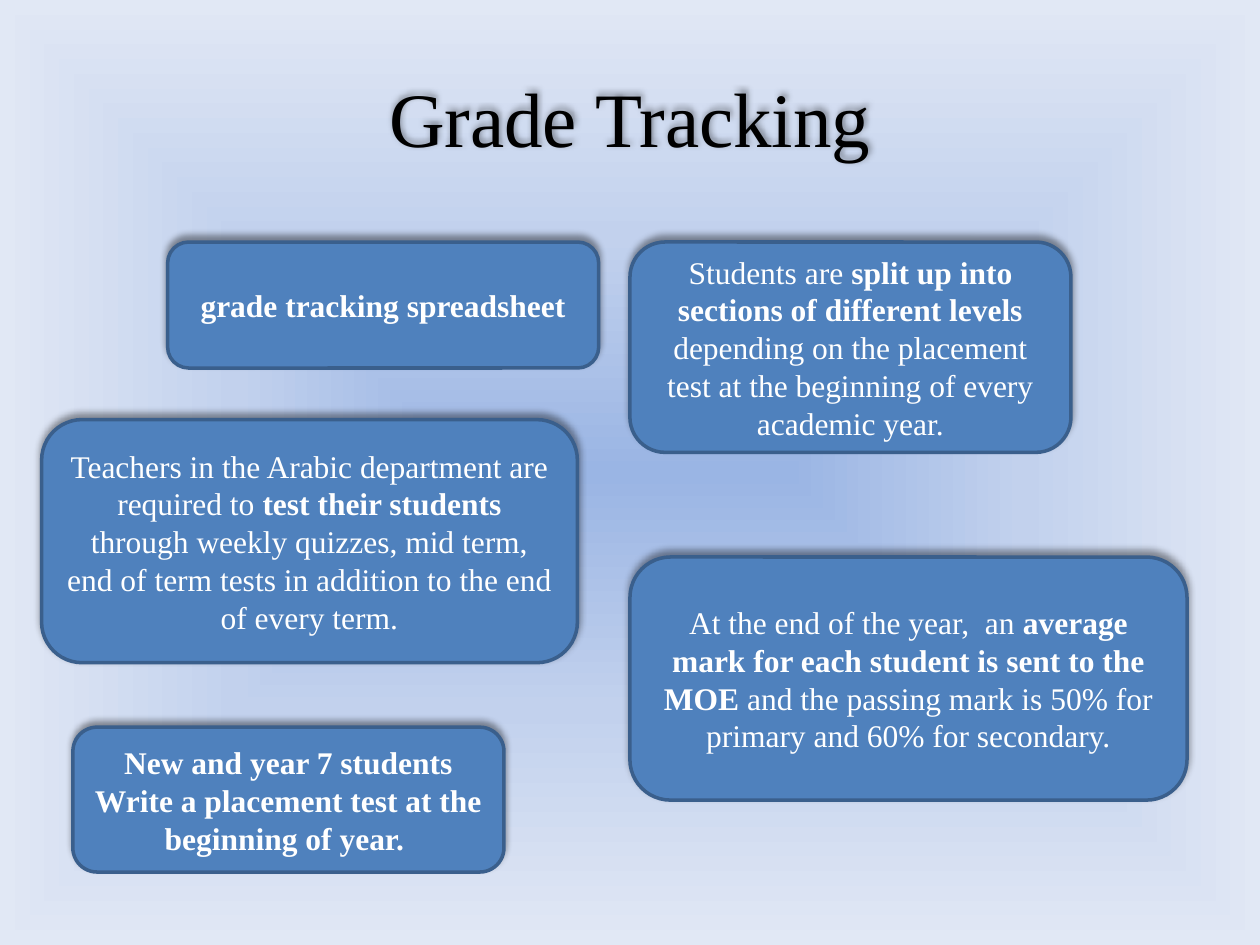
"""Build the Grade Tracking slide."""
from dataclasses import dataclass

from lxml import etree
from pptx import Presentation
from pptx import util as u
from pptx.dml.color import RGBColor
from pptx.enum import shapes, text
from pptx.oxml import ns


@dataclass(frozen=True)
class Theme:
    """Colours, font and sizes of the slide."""
    font: str = "Times New Roman"
    title_size: int = 44
    body_size: int = 18
    ink: str = "000000"
    paper: str = "FFFFFF"
    box: str = "4F81BD"
    edge: str = "3A5F8C"
    glow: tuple = ((0, "9AB5E4"), (50, "C2D1ED"), (100, "E1E8F5"))


THEME = Theme()

BOXES = (
    ((0.84, 8.46, 10.8, 4.9),
     "Teachers in the Arabic department are required to *test their students* "
     "through weekly quizzes, mid term, end of term tests in addition to the "
     "end of every term."),
    ((3.38, 4.88, 8.69, 2.54), "*grade tracking spreadsheet*"),
    ((12.7, 11.23, 11.23, 4.9),
     "At the end of the year,  an *average mark for each student is sent to "
     "the MOE *and the passing mark is 50% for primary and 60% for secondary."),
    ((12.7, 4.88, 8.89, 4.24),
     "Students are *split up into sections of different levels *depending on "
     "the placement test at the beginning of every academic year."),
    ((1.47, 14.66, 8.69, 2.92),
     "*New and year 7 students Write a placement test at the beginning of year. *"),
)


def add_element(parent, tag, **attributes):
    """Append a drawing element with the given attributes."""
    values = {name: str(value) for name, value in attributes.items()}
    return etree.SubElement(parent, ns.qn(tag), values)


def set_background(s):
    """Fill the slide with a gradient that spreads from its centre."""
    s.background.fill.gradient()
    grad = s.background._cSld.find(".//" + ns.qn("a:gradFill"))
    for child in list(grad):
        grad.remove(child)
    stops = add_element(grad, "a:gsLst")
    for position, colour in THEME.glow:
        stop = add_element(stops, "a:gs", pos=position * 1000)
        add_element(stop, "a:srgbClr", val=colour)
    spread = add_element(grad, "a:path", path="shape")
    add_element(spread, "a:fillToRect", l=50000, t=50000, r=50000, b=50000)


def add_shadow(sp):
    """Give a shape a soft shadow above it."""
    sp.shadow.inherit = False
    effects = sp._element.spPr.find(ns.qn("a:effectLst"))
    shadow = add_element(effects, "a:outerShdw", blurRad=u.Pt(4), dist=u.Pt(3),
                         dir=270 * 60000, algn="b", rotWithShape=0)
    colour = add_element(shadow, "a:srgbClr", val=THEME.ink)
    add_element(colour, "a:alpha", val=40000)


def write_text(sp, content, size, colour):
    """Write centred text in which asterisks switch bold on and off."""
    tf = sp.text_frame
    tf.word_wrap = True
    tf.vertical_anchor = text.MSO_ANCHOR.MIDDLE
    p = tf.paragraphs[0]
    p.alignment = text.PP_ALIGN.CENTER
    for i, part in enumerate(content.split("*")):
        if part:
            r = p.add_run()
            r.text = part
            r.font.name = THEME.font
            r.font.size = u.Pt(size)
            r.font.bold = i % 2 == 1
            r.font.color.rgb = RGBColor.from_string(colour)


def set_title(s, content):
    """Place and format the title."""
    sp = s.shapes.title
    sp.left, sp.top, sp.width, sp.height = map(u.Cm, (1.27, 0.76, 22.86, 3.18))
    write_text(sp, content, size=THEME.title_size, colour=THEME.ink)
    add_shadow(sp)


def add_box(s, place, content):
    """Add a rounded box with its text."""
    sp = s.shapes.add_shape(shapes.MSO_SHAPE.ROUNDED_RECTANGLE, *map(u.Cm, place))
    sp.fill.solid()
    sp.fill.fore_color.rgb = RGBColor.from_string(THEME.box)
    sp.line.color.rgb = RGBColor.from_string(THEME.edge)
    sp.line.width = u.Pt(2)
    add_shadow(sp)
    write_text(sp, content, size=THEME.body_size, colour=THEME.paper)


def main():
    """Build and save the slide."""
    prs = Presentation()
    prs.slide_width, prs.slide_height = u.Cm(25.4), u.Cm(19.05)
    s = prs.slides.add_slide(prs.slide_layouts[5])
    set_background(s)
    set_title(s, "Grade Tracking")
    for place, content in BOXES:
        add_box(s, place, content)
    prs.save("out.pptx")


if __name__ == "__main__":
    main()
